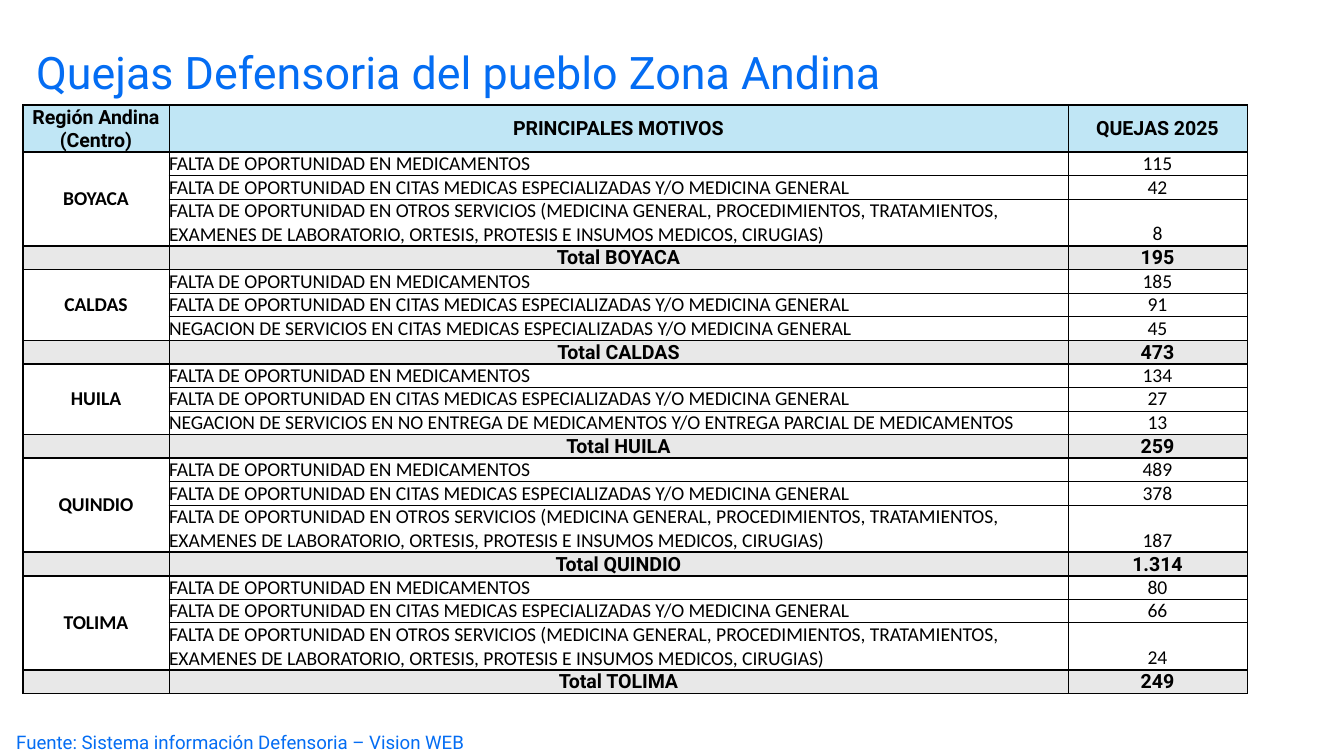
from dataclasses import dataclass

from lxml.etree import SubElement
from pptx import Presentation
from pptx.dml.color import RGBColor
from pptx.enum.text import MSO_ANCHOR, MSO_AUTO_SIZE, PP_ALIGN
from pptx.oxml.ns import qn
from pptx.util import Pt

SCALE = 914400 / 134.4


@dataclass(frozen=True)
class Theme:
    blue: str = "046DF3"
    black: str = "000000"
    white: str = "FFFFFF"
    sky: str = "C0E6F5"
    gray: str = "E8E8E8"
    head: str = "Roboto"
    body: str = "Calibri"
    title: float = 24
    cell: float = 10.5
    source: float = 10
    thin: float = 0.5
    thick: float = 1


THEME = Theme()

DRUGS = "FALTA DE OPORTUNIDAD EN MEDICAMENTOS"
VISITS = "FALTA DE OPORTUNIDAD EN CITAS MEDICAS ESPECIALIZADAS Y/O MEDICINA GENERAL"
OTHER = (
    "FALTA DE OPORTUNIDAD EN OTROS SERVICIOS (MEDICINA GENERAL, PROCEDIMIENTOS, "
    "TRATAMIENTOS, EXAMENES DE LABORATORIO, ORTESIS, PROTESIS E INSUMOS MEDICOS, CIRUGIAS)"
)
DENIED = "NEGACION DE SERVICIOS EN CITAS MEDICAS ESPECIALIZADAS Y/O MEDICINA GENERAL"
PARTIAL = (
    "NEGACION DE SERVICIOS EN NO ENTREGA DE MEDICAMENTOS "
    "Y/O ENTREGA PARCIAL DE MEDICAMENTOS"
)

HEADS = ("Región Andina (Centro)", "PRINCIPALES MOTIVOS", "QUEJAS 2025")
GROUPS = (
    ("BOYACA", OTHER, ("115", "42", "8"), "195"),
    ("CALDAS", DENIED, ("185", "91", "45"), "473"),
    ("HUILA", PARTIAL, ("134", "27", "13"), "259"),
    ("QUINDIO", OTHER, ("489", "378", "187"), "1.314"),
    ("TOLIMA", OTHER, ("80", "66", "24"), "249"),
)
COLS = (146, 899, 179)
ROW = 23
TOP_ROW = 35
SPAN = 3


def px(n):
    return round(n * SCALE)


def style(para, face, size, color, bold=False):
    font = para.font
    font.name = face
    font.size = Pt(size)
    font.bold = bold
    font.color.rgb = RGBColor.from_string(color)


def add_text(slide, text, box, size):
    frame = slide.shapes.add_textbox(*map(px, box)).text_frame
    frame.word_wrap = True
    frame.auto_size = MSO_AUTO_SIZE.SHAPE_TO_FIT_TEXT
    frame.text = text
    style(frame.paragraphs[0], THEME.head, size, THEME.blue)


def add_edge(cell, side, width):
    line = SubElement(cell._tc.get_or_add_tcPr(), qn("a:ln" + side), w=str(Pt(width)))
    fill = SubElement(line, qn("a:solidFill"))
    SubElement(fill, qn("a:srgbClr"), val=THEME.black)


def fill_cell(cell, text, face, bold, fill, edges,
              align=PP_ALIGN.CENTER, anchor=MSO_ANCHOR.BOTTOM):
    for side, width in zip("LRTB", edges):
        add_edge(cell, side, width)
    cell.fill.solid()
    cell.fill.fore_color.rgb = RGBColor.from_string(fill)
    cell.margin_left = cell.margin_right = cell.margin_top = cell.margin_bottom = 0
    cell.vertical_anchor = anchor
    para = cell.text_frame.paragraphs[0]
    if text:
        para.text = text
        para.alignment = align
        style(para, face, THEME.cell, THEME.black, bold)
    else:
        SubElement(para._p, qn("a:endParaRPr"), sz=str(int(THEME.cell * 100)))


def edges(col, top=THEME.thick, low=THEME.thick):
    left = THEME.thin if col else THEME.thick
    return left, THEME.thin, top, low


def fill_band(table, row, texts, fill, anchors):
    for col, (text, anchor) in enumerate(zip(texts, anchors)):
        fill_cell(table.cell(row, col), text, THEME.head, True, fill,
                  edges(col), anchor=anchor)


def fill_group(table, start, group):
    name, last, counts, total = group
    for step, (cause, count) in enumerate(zip((DRUGS, VISITS, last), counts)):
        row = start + step
        top = THEME.thin if step else THEME.thick
        low = THEME.thick if step == SPAN - 1 else THEME.thin
        if step:
            fill_cell(table.cell(row, 0), "", THEME.body, True, THEME.white, edges(0)[:2])
        else:
            fill_cell(table.cell(row, 0), name, THEME.body, True, THEME.white,
                      edges(0), anchor=MSO_ANCHOR.MIDDLE)
        fill_cell(table.cell(row, 1), cause, THEME.body, False, THEME.white,
                  edges(1, top, low), PP_ALIGN.LEFT)
        fill_cell(table.cell(row, 2), count, THEME.body, False, THEME.white,
                  edges(2, top, low))
        if cause == OTHER:
            table.rows[row].height = px(2 * ROW)
    table.cell(start, 0).merge(table.cell(start + SPAN - 1, 0))
    fill_band(table, start + SPAN, ("", "Total " + name, total), THEME.gray,
              (MSO_ANCHOR.BOTTOM,) * 3)


def add_grid(slide):
    count = 1 + len(GROUPS) * (SPAN + 1)
    frame = slide.shapes.add_table(count, len(COLS), px(23), px(105),
                                   px(sum(COLS)), px(count * ROW))
    table = frame.table
    table.first_row = table.horz_banding = False
    for col, width in zip(table.columns, COLS):
        col.width = px(width)
    for row in table.rows:
        row.height = px(ROW)
    table.rows[0].height = px(TOP_ROW)
    fill_band(table, 0, HEADS, THEME.sky,
              (MSO_ANCHOR.BOTTOM, MSO_ANCHOR.MIDDLE, MSO_ANCHOR.MIDDLE))
    for index, group in enumerate(GROUPS):
        fill_group(table, 1 + index * (SPAN + 1), group)


def main():
    deck = Presentation()
    deck.slide_width, deck.slide_height = px(1344), px(756)
    slide = deck.slides.add_slide(deck.slide_layouts[6])
    add_text(slide, "Quejas Defensoria del pueblo Zona Andina",
             (23, 38, 1293, 67), THEME.title)
    add_grid(slide)
    add_text(slide, "Fuente: Sistema información Defensoria – Vision WEB",
             (3, 724, 672, 36), THEME.source)
    deck.save("out.pptx")


if __name__ == "__main__":
    main()
